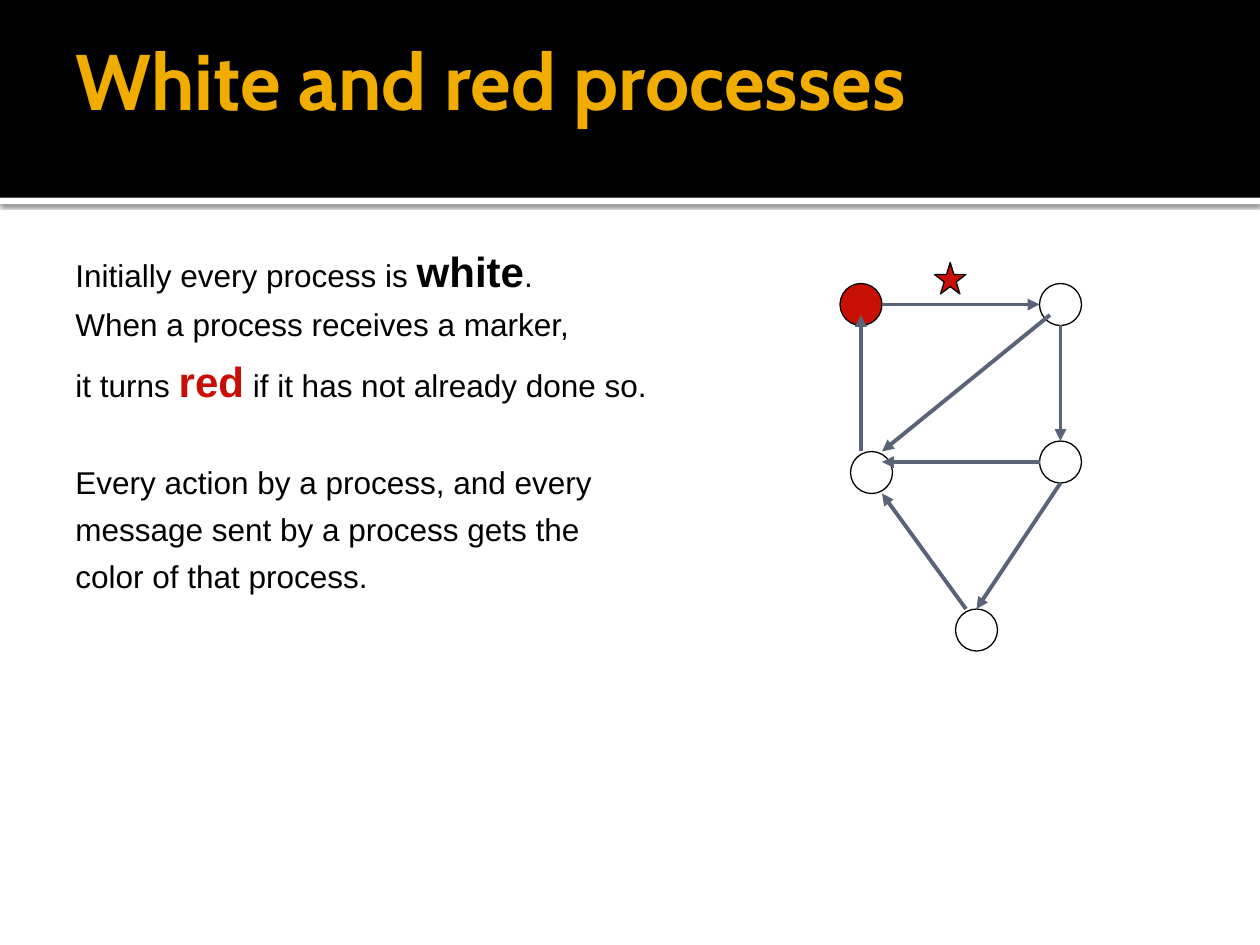
from lxml.etree import SubElement
from pptx import Presentation
from pptx.dml.color import RGBColor
from pptx.enum.shapes import MSO_CONNECTOR, MSO_SHAPE
from pptx.enum.text import MSO_ANCHOR
from pptx.oxml.ns import qn
from pptx.util import Inches, Pt

THEME = {
    "black": RGBColor(0x00, 0x00, 0x00),
    "white": RGBColor(0xFF, 0xFF, 0xFF),
    "red": RGBColor(0xC7, 0x0F, 0x05),
    "gold": RGBColor(0xF0, 0xAD, 0x00),
    "slate": RGBColor(0x5A, 0x63, 0x78),
    "title_font": "Cabin", "body_font": "Arial",
    "title": 45, "body": 18, "emphasis": 24,
    "outline": 0.75, "arrow": 2.25,
}
CELL = Inches(1) // 12  # the slide is a grid of 120 columns by 90 rows
NODE = 4  # diameter of a process, in cells

prs = Presentation()
prs.slide_width, prs.slide_height = 120 * CELL, 90 * CELL
slide = prs.slides.add_slide(prs.slide_layouts[6])


def add_figure(kind, column, row, columns, rows, fill=None, outlined=False):
    """Add a preset shape placed in grid cells."""
    figure = slide.shapes.add_shape(
        kind, *(round(n * CELL) for n in (column, row, columns, rows)))
    figure.shadow.inherit = False
    if fill:
        figure.fill.solid()
        figure.fill.fore_color.rgb = THEME[fill]
    else:
        figure.fill.background()
    if outlined:
        figure.line.color.rgb = THEME["black"]
        figure.line.width = Pt(THEME["outline"])
    else:
        figure.line.fill.background()
    return figure


def add_text(paragraphs, column, row, columns, rows, font, size, color="black", bold=False,
             anchor=MSO_ANCHOR.TOP, top=0.05, right=0.1, spacing=1.0, gap_before=None):
    """Add paragraphs of (text, run overrides) pairs; gap_before maps index to points."""
    box = slide.shapes.add_textbox(*(n * CELL for n in (column, row, columns, rows)))
    frame = box.text_frame
    frame.word_wrap = True
    frame.vertical_anchor = anchor
    frame.margin_top, frame.margin_right = Inches(top), Inches(right)
    for index, pieces in enumerate(paragraphs):
        paragraph = frame.add_paragraph() if index else frame.paragraphs[0]
        paragraph.line_spacing = spacing
        paragraph.space_before = Pt((gap_before or {}).get(index, 0))
        for text, override in pieces:
            run = paragraph.add_run()
            run.text = text
            run.font.name = font
            run.font.size = Pt(override.get("size", size))
            run.font.bold = override.get("bold", bold)
            run.font.color.rgb = THEME[override.get("color", color)]


# Header band with a shadowed white rule below it
BAND = 18.84
rule = add_figure(MSO_SHAPE.RECTANGLE, 0, BAND, 120, 0.6, "white")
effects = rule._element.spPr.find(qn("a:effectLst"))
shadow = SubElement(effects, qn("a:outerShdw"), blurRad=str(Pt(2.5)), dist=str(Pt(0.8)),
                    dir="5400000", algn="tl", rotWithShape="0")
shade = SubElement(shadow, qn("a:srgbClr"), val=str(THEME["black"]))
SubElement(shade, qn("a:alpha"), val="60000")
add_figure(MSO_SHAPE.RECTANGLE, 0, 0, 120, BAND, "black")

add_text([[("White and red processes", {})]], 6, 0, 102, 15, THEME["title_font"],
         THEME["title"], color="gold", bold=True, anchor=MSO_ANCHOR.MIDDLE, right=0.05)

strong = {"size": THEME["emphasis"], "bold": True}
rules = [
    [("Initially every process is ", {}), ("white", strong), (".", {})],
    [("When a process receives a marker,", {})],
    [("it turns ", {}), ("red", {**strong, "color": "red"}),
     (" if it has not already done so.", {})],
    [("Every action by a process, and every", {})],
    [("message sent by a process gets the", {})],
    [("color of that process.", {})],
]
add_text(rules, 6, 21, 64, 54, THEME["body_font"], THEME["body"],
         top=0.1, spacing=1.25, gap_before={3: 27})

# Processes: column, row, fill
processes = [(80, 27, "red"), (99, 42, None), (81, 43, None), (99, 27, None), (91, 58, None)]
for column, row, fill in processes:
    add_figure(MSO_SHAPE.OVAL, column, row, NODE, NODE, fill, outlined=True)

# Channels: start and end points on the grid
channels = [
    ((84, 29), (99, 29)),
    ((101, 31), (101, 42)),
    ((99, 44), (84, 44)),
    ((82, 43), (82, 30)),
    ((100, 30), (84, 43)),
    ((101, 46), (93, 58)),
    ((92, 58), (84, 47)),
]
for start, end in channels:
    channel = slide.shapes.add_connector(
        MSO_CONNECTOR.STRAIGHT, *(n * CELL for n in start + end))
    channel.line.color.rgb = THEME["slate"]
    channel.line.width = Pt(THEME["arrow"])
    SubElement(channel.line._get_or_add_ln(), qn("a:tailEnd"), type="triangle")
    SubElement(channel._element.spPr, qn("a:effectLst"))

marker = add_figure(MSO_SHAPE.STAR_5_POINT, 89, 25, 3, 3, "red", outlined=True)

prs.save("out.pptx")
